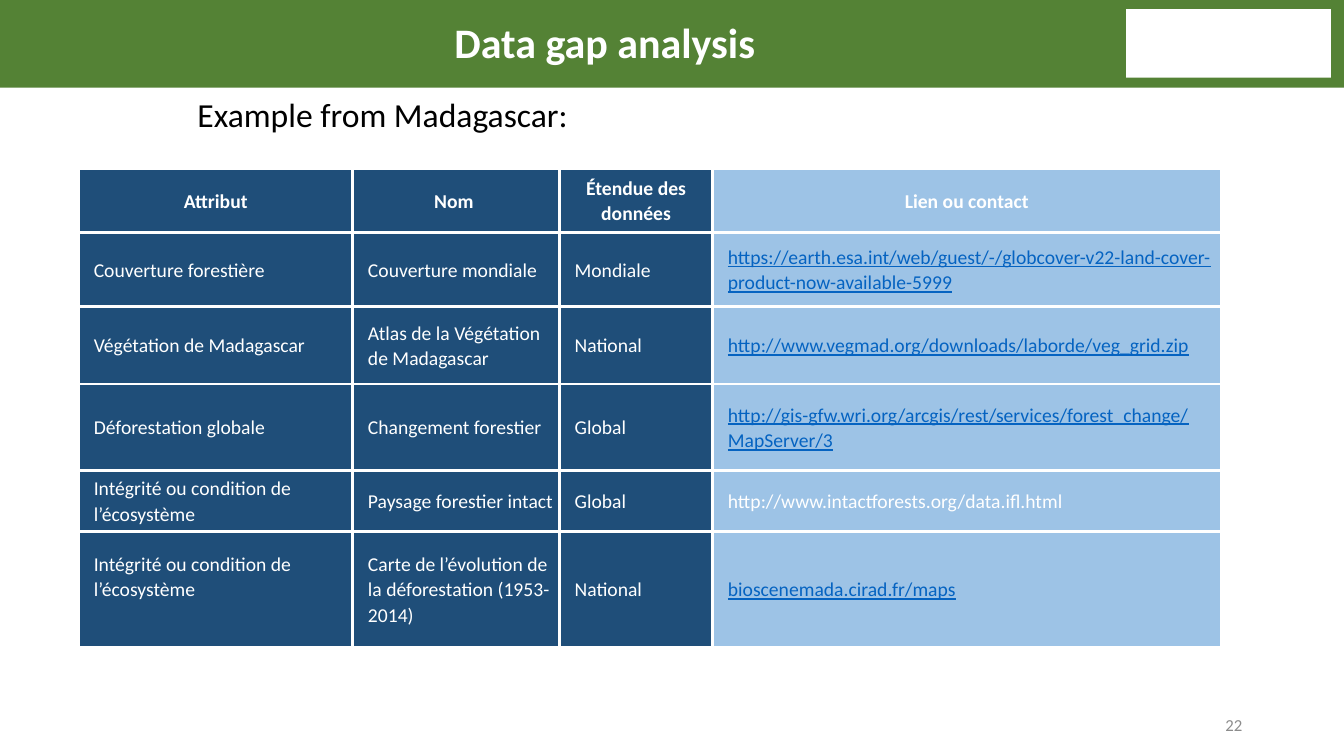
from dataclasses import dataclass

from lxml import etree
from pptx import Presentation
from pptx.dml.color import RGBColor
from pptx.enum.shapes import MSO_SHAPE
from pptx.enum.text import MSO_ANCHOR, PP_ALIGN
from pptx.oxml.ns import qn
from pptx.util import Inches, Pt

RECT = MSO_SHAPE.RECTANGLE
TOP, MIDDLE = MSO_ANCHOR.TOP, MSO_ANCHOR.MIDDLE
LEFT, CENTER, RIGHT = PP_ALIGN.LEFT, PP_ALIGN.CENTER, PP_ALIGN.RIGHT


@dataclass(frozen=True)
class Theme:
    font: str = "Calibri"
    white: str = "FFFFFF"
    black: str = "000000"
    gray: str = "8C8C8C"
    green: str = "548235"
    navy: str = "1F4E79"
    sky: str = "9DC3E6"
    link: str = "0563C1"
    title: int = 30
    lead: int = 24
    body: int = 14
    small: int = 12
    rule: float = 2.25


def write(frame, text, *, size, color, font, bold=False, under=False,
          align=LEFT, line=1.0, indent=0):
    """Put one formatted paragraph in a text frame."""
    frame.word_wrap = True
    para = frame.paragraphs[0]
    para.alignment = align
    para.line_spacing = line
    if indent:
        props = para._p.get_or_add_pPr()
        props.set("marL", str(Inches(indent)))
        props.set("indent", "0")
    run = para.add_run()
    run.text = text
    run.font.name = font
    run.font.size = Pt(size)
    run.font.bold = bold
    run.font.underline = under
    run.font.color.rgb = RGBColor.from_string(color)


class Deck:
    def __init__(self, theme, slide):
        self.theme = theme
        self.slide = slide

    def block(self, box, fill):
        shape = self.slide.shapes.add_shape(RECT, *map(Inches, box))
        shape.shadow.inherit = False
        shape.fill.solid()
        shape.fill.fore_color.rgb = RGBColor.from_string(fill)
        shape.line.fill.background()

    def label(self, box, text, anchor=MIDDLE, **style):
        frame = self.slide.shapes.add_textbox(*map(Inches, box)).text_frame
        frame.vertical_anchor = anchor
        write(frame, text, font=self.theme.font, **style)

    def border(self, cell):
        props = cell._tc.get_or_add_tcPr()
        for side in ("a:lnL", "a:lnR", "a:lnT", "a:lnB"):
            line = etree.SubElement(props, qn(side), w=str(Pt(self.theme.rule)))
            fill = etree.SubElement(line, qn("a:solidFill"))
            etree.SubElement(fill, qn("a:srgbClr"), val=self.theme.white)

    def cell(self, cell, text, fill, low=0, **style):
        cell.vertical_anchor = MIDDLE
        cell.margin_left = cell.margin_right = Inches(0.05)
        cell.margin_top, cell.margin_bottom = 0, Inches(low)
        self.border(cell)
        cell.fill.solid()
        cell.fill.fore_color.rgb = RGBColor.from_string(fill)
        write(cell.text_frame, text, font=self.theme.font,
              size=self.theme.body, line=1.07, **style)

    def table(self, left, top, widths, heights, rows, plain, raised):
        look = self.theme
        box = (left, top, sum(widths), sum(heights))
        grid = self.slide.shapes.add_table(
            len(rows), len(widths), *map(Inches, box)).table
        grid.first_row = grid.horz_banding = False
        for col, width in zip(grid.columns, widths):
            col.width = Inches(width)
        for row, height in zip(grid.rows, heights):
            row.height = Inches(height)
        last = len(widths) - 1
        for r, row in enumerate(rows):
            for c, text in enumerate(row):
                head = r == 0
                link = c == last and not head and r != plain
                self.cell(
                    grid.cell(r, c), text,
                    fill=look.sky if c == last else look.navy,
                    low=0.25 if (r, c) == raised else 0,
                    color=look.link if link else look.white,
                    bold=head, under=link,
                    align=CENTER if head else LEFT,
                    indent=0 if head else 0.1)


ROWS = [
    ("Attribut", "Nom ", "Étendue des données", "Lien ou contact"),
    ("Couverture forestière", "Couverture mondiale", "Mondiale",
     "https://earth.esa.int/web/guest/-/globcover-v22-land-cover-product-now-available-5999"),
    ("Végétation de Madagascar", "Atlas de la Végétation de Madagascar",
     "National", "http://www.vegmad.org/downloads/laborde/veg_grid.zip"),
    ("Déforestation globale", "Changement forestier", "Global",
     "http://gis-gfw.wri.org/arcgis/rest/services/forest_change/MapServer/3"),
    ("Intégrité ou condition de l’écosystème", "Paysage forestier intact",
     "Global", "http://www.intactforests.org/data.ifl.html"),
    ("Intégrité ou condition de l’écosystème",
     "Carte de l’évolution de la déforestation (1953-2014)",
     "National", "bioscenemada.cirad.fr/maps"),
]


def main():
    show = Presentation()
    show.slide_width, show.slide_height = Inches(13.33), Inches(7.5)
    look = Theme()
    deck = Deck(look, show.slides.add_slide(show.slide_layouts[6]))

    # Header band
    deck.block((0, -0.03, 13.33, 0.9), look.green)
    deck.block((11.17, 0.09, 2.03, 0.68), look.white)
    deck.label((0.93, 0, 10.14, 0.9), "Data gap analysis", size=look.title,
               color=look.white, bold=True, align=CENTER, line=0.9)

    # Data sources
    deck.table(0.78, 1.67, (2.72, 2.05, 1.52, 5.04),
               (0.64, 0.73, 0.77, 0.86, 0.6, 1.15), ROWS,
               plain=4, raised=(5, 0))
    deck.label((1.86, 0.93, 4.46, 0.47), "Example from Madagascar:",
               anchor=TOP, size=look.lead, color=look.black, line=0.9)

    # Page number
    deck.label((11.54, 7.04, 0.88, 0.31), "22", size=look.small,
               color=look.gray, align=RIGHT)

    show.save("out.pptx")


if __name__ == "__main__":
    main()
